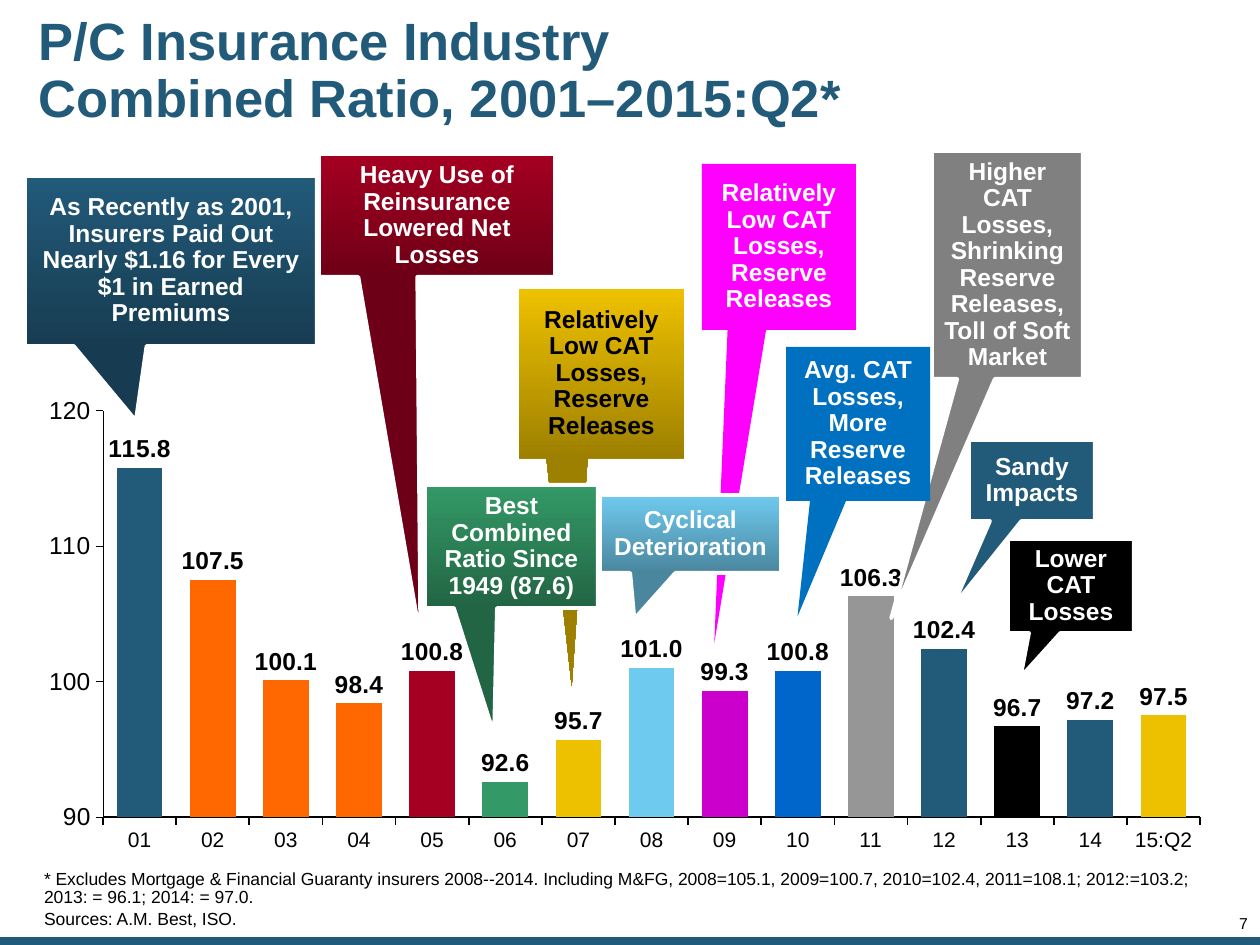
from lxml import etree
from pptx import Presentation
from pptx.chart.data import CategoryChartData
from pptx.dml.color import RGBColor
from pptx.enum.chart import XL_CHART_TYPE as CT, XL_LABEL_POSITION as LP, XL_TICK_MARK as TM
from pptx.enum.shapes import MSO_SHAPE as SH
from pptx.enum.text import MSO_ANCHOR as VA, PP_ALIGN as AL
from pptx.oxml.ns import qn
from pptx.util import Emu, Pt

W, H = 1260, 945
FONT = "Arial"
TEAL, WHITE, BLACK = "225A7A", "FFFFFF", "000000"
ORANGE, GOLD, RED, GREEN, SKY = "FF6801", "EEC100", "A50021", "339966", "6FCAEF"

RATIOS = {
    "01": (115.8, TEAL), "02": (107.5, ORANGE), "03": (100.1, ORANGE),
    "04": (98.4, ORANGE), "05": (100.8, RED), "06": (92.6, GREEN),
    "07": (95.7, GOLD), "08": (101.0, SKY), "09": (99.3, "CC00CC"),
    "10": (100.8, "0066CC"), "11": (106.3, "969696"), "12": (102.4, TEAL),
    "13": (96.7, BLACK), "14": (97.2, TEAL), "15:Q2": (97.5, GOLD),
}

# Back to front: text, box, pointer offset, fill colours (two make a gradient),
# text colour, white outline
CALLOUTS = [
    ("As Recently as 2001, Insurers Paid Out Nearly $1.16 for Every $1 in Earned Premiums",
     (25, 176, 292, 170), (-0.12, 0.94), (TEAL, "173C51"), WHITE, True),
    ("Relatively Low CAT Losses, Reserve Releases",
     (519, 289, 165, 169), (-0.18, 1.85), (GOLD, "9E8000"), BLACK, False),
    ("Heavy Use of Reinsurance Lowered Net Losses",
     (319, 154, 236, 123), (-0.07, 3.44), (RED, "6D0016"), WHITE, True),
    ("Relatively Low CAT Losses, Reserve Releases",
     (702, 164, 154, 166), (-0.42, 2.39), ("FF00FF",), WHITE, False),
    ("Higher CAT Losses, Shrinking Reserve Releases, Toll of Soft Market",
     (932, 151, 151, 228), (-0.77, 1.55), ("808080",), WHITE, True),
    ("Cyclical Deterioration",
     (600, 495, 181, 78), (-0.31, 1.09), (SKY, "4A869E"), WHITE, True),
    ("Sandy Impacts",
     (969, 440, 126, 81), (-0.63, 1.56), (TEAL,), WHITE, True),
    ("Lower CAT Losses",
     (1008, 539, 126, 94), (-0.4, 0.97), (BLACK,), WHITE, True),
    ("Best Combined Ratio Since 1949 (87.6)",
     (425, 485, 173, 123), (-0.1, 1.53), (GREEN, "226544"), WHITE, True),
    ("Avg. CAT Losses, More Reserve Releases",
     (786, 347, 144, 154), (-0.42, 1.25), ("0070C0",), WHITE, False),
]


def px(n):
    return Emu(round(n * 914400 / 126))


def rgb(code):
    return RGBColor.from_string(code)


def set_font(font, size, color=BLACK, bold=False):
    font.name, font.size, font.bold = FONT, Pt(size), bold
    font.color.rgb = rgb(color)


def write(sp, paragraphs, size, color=BLACK, bold=False, align=AL.LEFT,
          anchor=VA.TOP, inset=0, spacing=0.9, gap=0):
    tf = sp.text_frame
    tf.word_wrap, tf.vertical_anchor = True, anchor
    tf.margin_left = tf.margin_right = tf.margin_top = tf.margin_bottom = px(inset)
    for i, text in enumerate(paragraphs):
        p = tf.add_paragraph() if i else tf.paragraphs[0]
        p.text, p.alignment, p.line_spacing = text, align, spacing
        p.space_before = Pt(gap if i else 0)
        set_font(p.font, size, color, bold)


def add_text(s, box, paragraphs, size, **style):
    write(s.shapes.add_textbox(*map(px, box)), paragraphs, size, **style)


def add_box(s, shape, box, colors, outline=False):
    sp = s.shapes.add_shape(shape, *map(px, box))
    sp.shadow.inherit = False
    if len(colors) == 2:
        sp.fill.gradient()
        sp.fill.gradient_angle = 270
        for stop, color, position in zip(sp.fill.gradient_stops, colors, (0, 1)):
            stop.color.rgb, stop.position = rgb(color), position
    else:
        sp.fill.solid()
        sp.fill.fore_color.rgb = rgb(colors[0])
    if outline:
        sp.line.color.rgb, sp.line.width = rgb(WHITE), Pt(2.25)
    else:
        sp.line.fill.background()
    return sp


def add_callout(s, text, box, pointer, colors, text_color, outline):
    sp = add_box(s, SH.RECTANGULAR_CALLOUT, box, colors, outline)
    sp.adjustments[0], sp.adjustments[1] = pointer
    write(sp, [text], 14, color=text_color, bold=True, align=AL.CENTER,
          anchor=VA.MIDDLE, inset=12)


def set_plot_area(chart, x, y, w, h):
    area = chart._chartSpace.chart.plotArea
    for old in area.findall(qn("c:layout")):
        area.remove(old)
    layout = etree.Element(qn("c:layout"))
    manual = etree.SubElement(layout, qn("c:manualLayout"))
    for tag, val in (("layoutTarget", "inner"), ("xMode", "edge"), ("yMode", "edge"),
                     ("x", x), ("y", y), ("w", w), ("h", h)):
        etree.SubElement(manual, qn(f"c:{tag}")).set("val", str(val))
    area.insert(0, layout)


def add_ratio_chart(s, box):
    data = CategoryChartData(number_format="0.0")
    data.categories = list(RATIOS)
    data.add_series("Combined Ratio", [value for value, _ in RATIOS.values()])
    chart = s.shapes.add_chart(CT.COLUMN_CLUSTERED, *map(px, box), data).chart
    chart.has_legend = chart.has_title = False
    set_font(chart.font, 12)
    set_plot_area(chart, 0.06, 0.08, 0.94, 0.84)

    # Axes
    cat, val = chart.category_axis, chart.value_axis
    val.minimum_scale, val.maximum_scale, val.major_unit = 90, 120, 10
    val.tick_labels.number_format = "0"
    val.tick_labels.number_format_is_linked = False
    for axis, size, width in ((cat, 12, 1), (val, 14, 0.25)):
        axis.has_major_gridlines = False
        axis.major_tick_mark, axis.minor_tick_mark = TM.OUTSIDE, TM.NONE
        axis.format.line.color.rgb, axis.format.line.width = rgb(BLACK), Pt(width)
        set_font(axis.tick_labels.font, size)

    # Columns and their labels
    plot = chart.plots[0]
    plot.gap_width, plot.vary_by_categories = 60, False
    plot.has_data_labels = True
    labels = plot.data_labels
    labels.show_value, labels.position = True, LP.OUTSIDE_END
    labels.number_format, labels.number_format_is_linked = "0.0", False
    set_font(labels.font, 14, bold=True)
    series = plot.series[0]
    series.format.fill.solid()
    series.format.fill.fore_color.rgb = rgb(TEAL)
    for i, (_, color) in enumerate(RATIOS.values()):
        if color != TEAL:
            fill = series.points[i].format.fill
            fill.solid()
            fill.fore_color.rgb = rgb(color)


def add_footer(s, box):
    x, y, w, h = box
    add_box(s, SH.RECTANGLE, (x, y + h - 8, w, 8), [TEAL])
    add_text(s, (x + w - 74, y + h - 28, 62, 16), ["7"], 9, align=AL.RIGHT, spacing=0.85)
    add_text(s, (x + 44, y, w - 82, h - 16), [
        "* Excludes Mortgage & Financial Guaranty insurers 2008--2014. Including M&FG, "
        "2008=105.1, 2009=100.7, 2010=102.4, 2011=108.1; 2012:=103.2; "
        "2013: = 96.1; 2014: = 97.0.",
        "Sources: A.M. Best, ISO."], 10, anchor=VA.BOTTOM, spacing=0.85, gap=2.5)


def main():
    prs = Presentation()
    prs.slide_width, prs.slide_height = px(W), px(H)
    s = prs.slides.add_slide(prs.slide_layouts[6])
    add_footer(s, (0, 869, W, H - 869))
    add_text(s, (33, 13, 1019, 118),
             ["P/C Insurance Industry\nCombined Ratio, 2001–2015:Q2*"], 30,
             color=TEAL, bold=True, anchor=VA.MIDDLE, inset=6)
    add_ratio_chart(s, (33, 372, 1168, 484))
    for callout in CALLOUTS:
        add_callout(s, *callout)
    prs.save("out.pptx")


if __name__ == "__main__":
    main()
